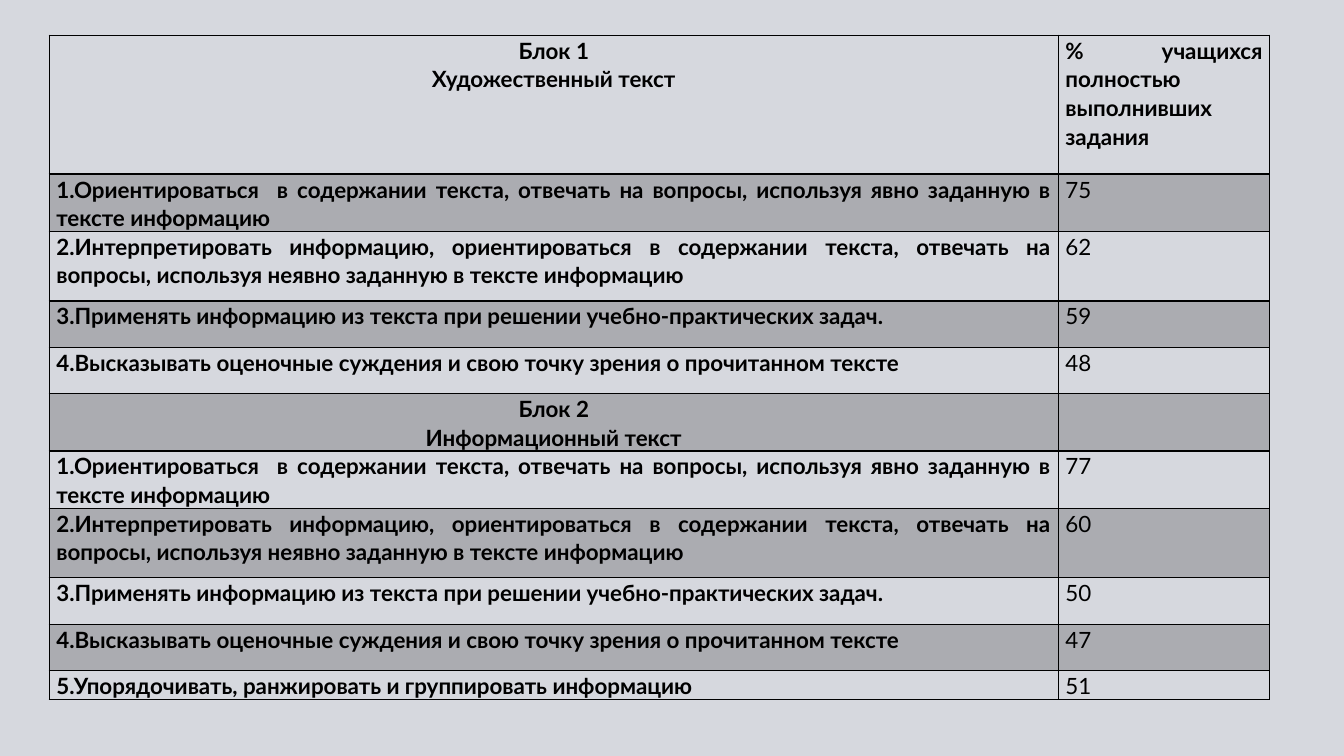
from dataclasses import dataclass

from lxml import etree
from pptx import Presentation
from pptx import util as u
from pptx.dml import color
from pptx.enum import text
from pptx.oxml import ns


@dataclass(frozen=True)
class Theme:
    background: color.RGBColor = color.RGBColor(0xD6, 0xD8, 0xDE)
    ink: color.RGBColor = color.RGBColor(0, 0, 0)
    band_alpha: int = 20
    font: str = "Lato"
    size: u.Pt = u.Pt(16)
    line_spacing: float = 1.07
    border: u.Pt = u.Pt(1)
    header_border: u.Pt = u.Pt(2)
    side_margin: u.Cm = u.Cm(0.18)


@dataclass(frozen=True)
class ResultRow:
    label: str
    percent: str
    height: float
    is_block: bool = False


THEME = Theme()
COLUMN_WIDTHS = (25.43, 5.33)

FIND = "1.Ориентироваться  в содержании текста, отвечать на вопросы, используя явно заданную в тексте информацию"
INTERPRET = (
    "2.Интерпретировать информацию, ориентироваться в содержании текста, "
    "отвечать на вопросы, используя неявно заданную в тексте информацию"
)
APPLY = "3.Применять информацию из текста при решении учебно-практических задач."
JUDGE = "4.Высказывать оценочные суждения и свою точку зрения о прочитанном тексте"
ARRANGE = "5.Упорядочивать, ранжировать и группировать информацию"

ROWS = (
    ResultRow("Блок 1\nХудожественный текст", "% учащихся полностью выполнивших задания", 3.5, True),
    ResultRow(FIND, "75", 1.37),
    ResultRow(INTERPRET, "62", 1.75),
    ResultRow(APPLY, "59", 1.17),
    ResultRow(JUDGE, "48", 1.17),
    ResultRow("Блок 2\nИнформационный текст", "", 1.37, True),
    ResultRow(FIND, "77", 1.37),
    ResultRow(INTERPRET, "60", 1.75),
    ResultRow(APPLY, "50", 1.17),
    ResultRow(JUDGE, "47", 1.17),
    ResultRow(ARRANGE, "51", 0.69),
)


def write_cell(cell, content: str, alignment: text.PP_ALIGN, bold: bool) -> None:
    cell.margin_left = cell.margin_right = THEME.side_margin
    cell.margin_top = cell.margin_bottom = 0
    cell.text_frame.text = content
    for paragraph in cell.text_frame.paragraphs:
        paragraph.alignment = alignment
        paragraph.line_spacing = THEME.line_spacing
        for run in paragraph.runs:
            run.font.name = THEME.font
            run.font.size = THEME.size
            run.font.bold = bold
            run.font.color.rgb = THEME.ink


def draw_borders(cell, row_index: int) -> None:
    properties = cell._tc.get_or_add_tcPr()
    widths = {side: THEME.border for side in ("lnL", "lnR", "lnT", "lnB")}
    # The heavier rule lies between the header and the first result
    if row_index == 0:
        widths["lnB"] = THEME.header_border
    elif row_index == 1:
        widths["lnT"] = THEME.header_border
    for side, width in widths.items():
        line = etree.SubElement(properties, ns.qn(f"a:{side}"), w=str(int(width)))
        fill = etree.SubElement(line, ns.qn("a:solidFill"))
        etree.SubElement(fill, ns.qn("a:srgbClr"), val=str(THEME.ink))


def fill_band(cell, shaded: bool) -> None:
    if not shaded:
        cell.fill.background()
        return
    cell.fill.solid()
    cell.fill.fore_color.rgb = THEME.ink
    ink = cell._tc.tcPr.find(ns.qn("a:solidFill")).find(ns.qn("a:srgbClr"))
    etree.SubElement(ink, ns.qn("a:alpha"), val=str(THEME.band_alpha * 1000))


def add_results_table(slide) -> None:
    frame = slide.shapes.add_table(
        len(ROWS), len(COLUMN_WIDTHS), u.Cm(1.24), u.Cm(0.89),
        u.Cm(sum(COLUMN_WIDTHS)), u.Cm(sum(row.height for row in ROWS)),
    )
    table = frame.table
    table.first_row = table.horz_banding = False
    for column, width in zip(table.columns, COLUMN_WIDTHS):
        column.width = u.Cm(width)

    for index, row in enumerate(ROWS):
        table.rows[index].height = u.Cm(row.height)
        label_cell, percent_cell = table.rows[index].cells
        label_alignment = text.PP_ALIGN.CENTER if row.is_block else text.PP_ALIGN.JUSTIFY
        write_cell(label_cell, row.label, label_alignment, True)
        write_cell(percent_cell, row.percent, text.PP_ALIGN.JUSTIFY, row.is_block)
        for cell in (label_cell, percent_cell):
            draw_borders(cell, index)
            fill_band(cell, index % 2 == 1)


def main() -> None:
    presentation = Presentation()
    presentation.slide_width = u.Cm(33.87)
    presentation.slide_height = u.Cm(19.05)
    slide = presentation.slides.add_slide(presentation.slide_layouts[6])

    # Background
    slide.background.fill.solid()
    slide.background.fill.fore_color.rgb = THEME.background

    # Reading results by block
    add_results_table(slide)
    presentation.save("out.pptx")


if __name__ == "__main__":
    main()
